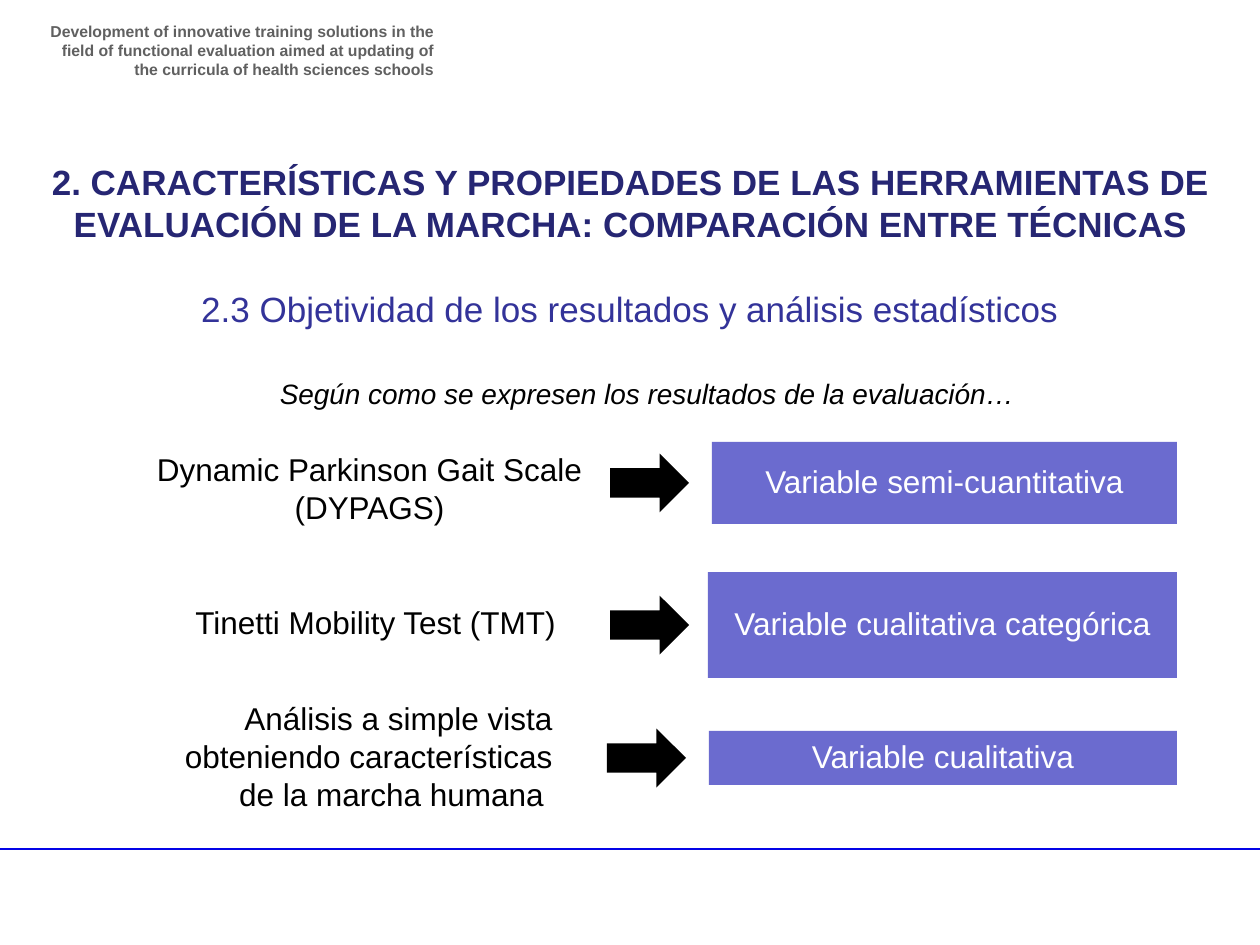
import pptx
import pptx.util
import pptx.dml.color
import pptx.enum.shapes
import pptx.enum.text
import pptx.oxml

RGBColor = pptx.dml.color.RGBColor
SHAPE = pptx.enum.shapes.MSO_SHAPE
ALIGN = pptx.enum.text.PP_ALIGN
ANCHOR = pptx.enum.text.MSO_ANCHOR

BLACK = RGBColor(0x00, 0x00, 0x00)
WHITE = RGBColor(0xFF, 0xFF, 0xFF)
GREY = RGBColor(0x60, 0x60, 0x60)
NAVY = RGBColor(0x26, 0x26, 0x73)
INDIGO = RGBColor(0x33, 0x33, 0x99)
VIOLET = RGBColor(0x6B, 0x6B, 0xCF)
BLUE = RGBColor(0x04, 0x04, 0xE6)

PX_PER_INCH = 126
SLIDE_W, SLIDE_H = 1260, 945
ARROW_W, ARROW_H = 79, 59


def px(n):
    return pptx.util.Emu(round(n * 914400 / PX_PER_INCH))


def write(tf, text, size, color, align, bold=False, italic=False):
    tf.word_wrap = True
    p = tf.paragraphs[0]
    p.alignment = align
    r = p.add_run()
    r.text = text
    r.font.name = "Arial"
    r.font.size = pptx.util.Pt(size)
    r.font.bold = bold
    r.font.italic = italic
    r.font.color.rgb = color
    return p


def add_text(s, box, text, size, color, align=ALIGN.CENTER, **style):
    sp = s.shapes.add_textbox(*map(px, box))
    write(sp.text_frame, text, size, color, align, **style)


def add_block(s, kind, box, color):
    sp = s.shapes.add_shape(kind, *map(px, box))
    sp.shadow.inherit = False
    sp.fill.solid()
    sp.fill.fore_color.rgb = color
    sp.line.fill.background()
    return sp


def add_headings(s, box):
    x, y, w, h = box
    add_text(s, (x, y, w, 97),
             "2. CARACTERÍSTICAS Y PROPIEDADES DE LAS HERRAMIENTAS DE "
             "EVALUACIÓN DE LA MARCHA: COMPARACIÓN ENTRE TÉCNICAS",
             20, NAVY, bold=True)
    add_text(s, (x + 139, y + 127, 912, 55),
             "2.3 Objetividad de los resultados y análisis estadísticos", 20, INDIGO)
    add_text(s, (x + 122, y + 216, 980, 47),
             "Según como se expresen los resultados de la evaluación…",
             16, BLACK, italic=True)


def add_row(s, box, label, label_box, align, arrow_x, variable):
    x, y, w, h = box
    lx, ly, lw, lh = label_box
    add_text(s, (x + lx, y + ly, lw, lh), label, 18, BLACK, align)
    add_block(s, SHAPE.RIGHT_ARROW,
              (x + arrow_x, y + (h - ARROW_H) / 2, ARROW_W, ARROW_H), BLACK)
    sp = add_block(s, SHAPE.RECTANGLE, box, VIOLET)
    tf = sp.text_frame
    tf.margin_left = tf.margin_right = tf.margin_top = tf.margin_bottom = px(1)
    tf.vertical_anchor = ANCHOR.MIDDLE
    p = write(tf, variable, 18, WHITE, ALIGN.CENTER)
    p.line_spacing = 0.9


def add_frame(s, box):
    x, y, w, h = box
    rule_y = px(y + 849)
    line = s.shapes.add_connector(
        pptx.enum.shapes.MSO_CONNECTOR.STRAIGHT, px(x), rule_y, px(x + w), rule_y)
    line.line.color.rgb = BLUE
    line.line.width = pptx.util.Pt(1)
    line._element.spPr.append(pptx.oxml.parse_xml(
        '<a:effectLst xmlns:a="http://schemas.openxmlformats.org/drawingml/2006/main"/>'))
    add_text(s, (x + 35, y + 16, 411, 59),
             "Development of innovative training solutions in the ﬁeld of functional "
             "evaluation aimed at updating of the curricula of health sciences schools",
             9, GREY, ALIGN.RIGHT, bold=True)


def main():
    prs = pptx.Presentation()
    prs.slide_width, prs.slide_height = px(SLIDE_W), px(SLIDE_H)
    s = prs.slides.add_slide(prs.slide_layouts[6])
    add_frame(s, (0, 0, SLIDE_W, SLIDE_H))
    add_headings(s, (35, 154, 1191, 263))
    rows = [
        ((712, 442, 465, 82), "Dynamic Parkinson Gait Scale (DYPAGS)",
         (-618, 2, 551, 89), ALIGN.CENTER, -102, "Variable semi-cuantitativa"),
        ((708, 572, 469, 106), "Tinetti Mobility Test (TMT)",
         (-608, 25, 551, 50), ALIGN.CENTER, -98, "Variable cualitativa categórica"),
        ((709, 731, 468, 54),
         "Análisis a simple vista obteniendo características de la marcha humana ",
         (-575, -38, 431, 127), ALIGN.RIGHT, -102, "Variable cualitativa"),
    ]
    for row in rows:
        add_row(s, *row)
    prs.save("out.pptx")


if __name__ == "__main__":
    main()
